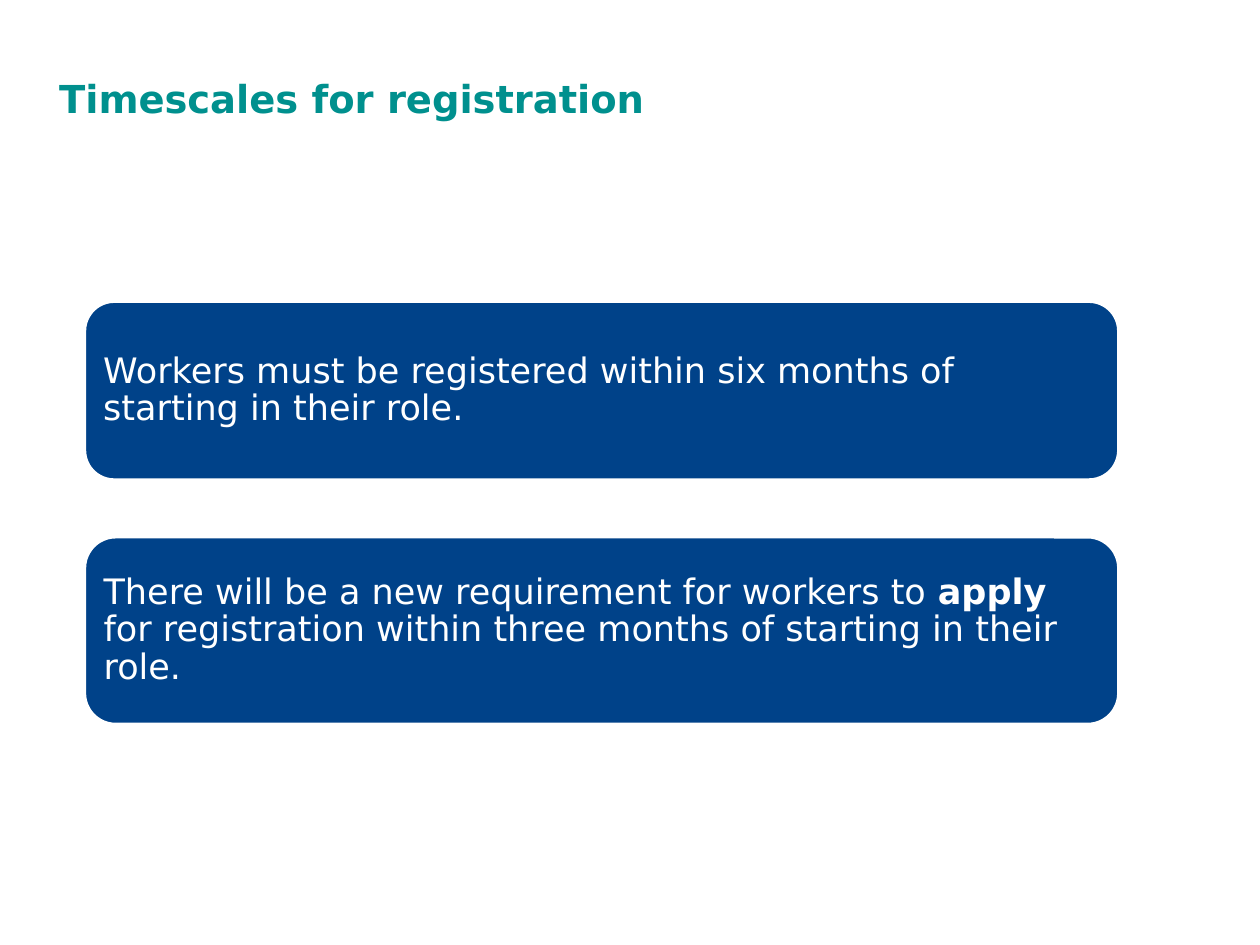
import pptx
import pptx.dml.color
import pptx.enum.shapes
import pptx.enum.text
import pptx.util
from pptx.util import Inches

FONT = "DejaVu Sans"
TEAL, BLUE, WHITE = "00908E", "004289", "FFFFFF"


def rgb(value):
    return pptx.dml.color.RGBColor.from_string(value)


def write(frame, *runs, size, color, bold=(), inset=0.08, line_spacing=None):
    """Fill a frame with one left-aligned paragraph; bold lists the bold runs."""
    frame.word_wrap = True
    frame.auto_size = pptx.enum.text.MSO_AUTO_SIZE.NONE
    frame.vertical_anchor = pptx.enum.text.MSO_ANCHOR.MIDDLE
    frame.margin_left = frame.margin_right = Inches(inset)
    frame.margin_top = frame.margin_bottom = Inches(min(inset, 0.08))
    paragraph = frame.paragraphs[0]
    paragraph.alignment = pptx.enum.text.PP_ALIGN.LEFT
    paragraph.line_spacing = line_spacing
    for text in runs:
        run = paragraph.add_run()
        run.text = text
        run.font.name = FONT
        run.font.size = pptx.util.Pt(size)
        run.font.bold = text in bold
        run.font.color.rgb = rgb(color)


deck = pptx.Presentation()
deck.slide_width, deck.slide_height = Inches(10), Inches(7.5)
slide = deck.slides.add_slide(deck.slide_layouts[5])
slide.background.fill.solid()
slide.background.fill.fore_color.rgb = rgb(WHITE)

heading = slide.shapes.title
heading.left, heading.top = Inches(0.37), Inches(0.54)
heading.width, heading.height = Inches(8.9), Inches(0.47)
write(heading.text_frame, "Timescales for registration", size=22, color=TEAL,
      bold=["Timescales for registration"], inset=0.1)

requirements = [
    (2.39, 1.42, ["Workers must be registered within six months of starting in their role."]),
    (4.26, 1.49, ["There will be a new requirement for workers to ", "apply",
                  " for registration within three months of starting in their role."]),
]
for top, height, runs in requirements:
    panel = slide.shapes.add_shape(
        pptx.enum.shapes.MSO_SHAPE.ROUNDED_RECTANGLE,
        Inches(0.67), Inches(top), Inches(8.21), Inches(height))
    panel.shadow.inherit = False
    panel.fill.solid()
    panel.fill.fore_color.rgb = rgb(BLUE)
    panel.line.color.rgb = rgb(WHITE)
    panel.line.width = pptx.util.Pt(2)
    write(panel.text_frame, *runs, size=20, color=WHITE, bold=["apply"],
          line_spacing=0.9)

deck.save("out.pptx")
